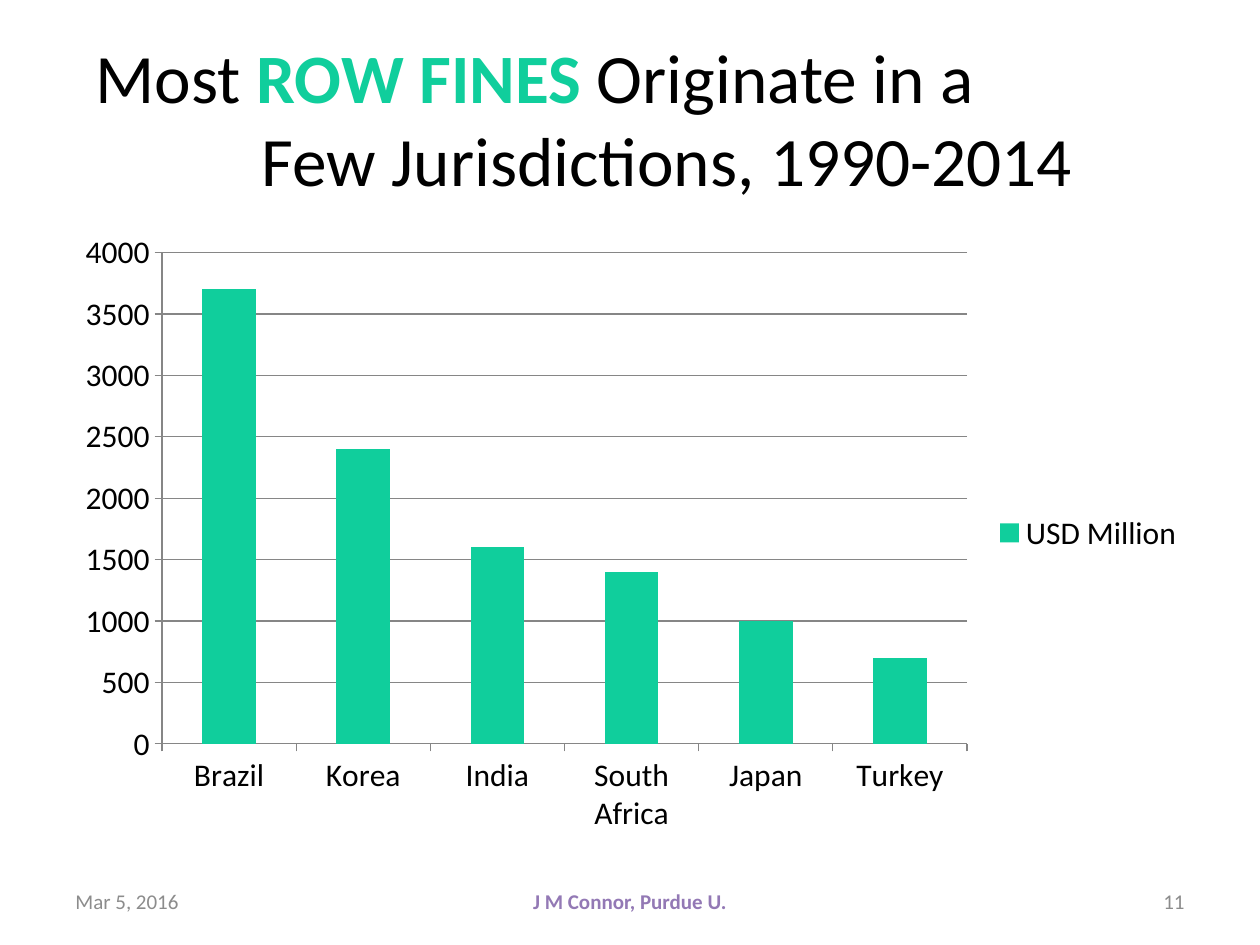
from dataclasses import dataclass

from pptx import Presentation
from pptx.chart.data import CategoryChartData
from pptx.dml.color import RGBColor
from pptx.enum.chart import XL_CHART_TYPE, XL_LEGEND_POSITION, XL_TICK_MARK
from pptx.enum.text import MSO_ANCHOR, MSO_AUTO_SIZE, PP_ALIGN
from pptx.util import Pt

PX = 914400 / 126
TITLE_ONLY = 5


@dataclass(frozen=True)
class Theme:
    font: str = "Calibri"
    ink: str = "000000"
    accent: str = "10CE9C"
    author: str = "9379B5"
    muted: str = "8C8C8C"
    grid: str = "868686"
    title_size: float = 39.6
    chart_size: float = 18
    footer_size: float = 12


THEME = Theme()
FINES = {"Brazil": 3700, "Korea": 2400, "India": 1600,
         "South Africa": 1400, "Japan": 1000, "Turkey": 700}


def px(length):
    return round(length * PX)


def style_font(font, size, color, bold=False):
    font.name = THEME.font
    font.size = Pt(size)
    font.bold = bold
    font.color.rgb = RGBColor.from_string(color)


def write(paragraph, text, *, size, color=THEME.ink, bold=False, align=None):
    run = paragraph.add_run()
    run.text = text
    style_font(run.font, size, color, bold)
    if align is not None:
        paragraph.alignment = align


def place_title(title, left, top, width, height):
    """Two lines, the second set in further by a hanging indent."""
    title.left, title.top = px(left), px(top)
    title.width, title.height = px(width), px(height)
    frame = title.text_frame
    frame.auto_size = MSO_AUTO_SIZE.NONE
    frame.vertical_anchor = MSO_ANCHOR.MIDDLE
    heading = frame.paragraphs[0]
    size = THEME.title_size
    write(heading, "Most ", size=size, align=PP_ALIGN.LEFT)
    write(heading, "ROW FINES", size=size, color=THEME.accent, bold=True)
    write(heading, " Originate in a", size=size)
    heading.add_line_break()
    write(heading, "Few Jurisdictions, 1990-2014", size=size)
    properties = heading._p.get_or_add_pPr()
    properties.set("marL", str(px(186)))
    properties.set("indent", str(px(-166)))


def style_axis(axis):
    axis.major_tick_mark = XL_TICK_MARK.OUTSIDE
    axis.minor_tick_mark = XL_TICK_MARK.NONE
    axis.format.line.color.rgb = RGBColor.from_string(THEME.grid)
    axis.format.line.width = Pt(0.75)


def place_fines_chart(slide, left, top, width, height):
    fines = CategoryChartData()
    fines.categories = list(FINES)
    fines.add_series("USD Million", list(FINES.values()))
    chart = slide.shapes.add_chart(
        XL_CHART_TYPE.COLUMN_STACKED,
        px(left), px(top), px(width), px(height), fines).chart
    style_font(chart.font, THEME.chart_size, THEME.ink)
    chart.has_title = False
    chart.has_legend = True
    chart.legend.position = XL_LEGEND_POSITION.RIGHT
    chart.legend.include_in_layout = False

    columns = chart.plots[0]
    columns.gap_width, columns.overlap = 150, 100
    columns.vary_by_categories = False
    fill = columns.series[0].format.fill
    fill.solid()
    fill.fore_color.rgb = RGBColor.from_string(THEME.accent)

    style_axis(chart.category_axis)
    amounts = chart.value_axis
    style_axis(amounts)
    amounts.minimum_scale, amounts.maximum_scale = 0, 4000
    amounts.major_unit = 500
    amounts.has_major_gridlines = True
    gridline = amounts.major_gridlines.format.line
    gridline.color.rgb = RGBColor.from_string(THEME.grid)
    gridline.width = Pt(0.75)


def place_footer(slide, left, top, width, height):
    """Date, author and page number at the left, centre and right of the box."""
    side, middle = 294, 400
    entries = (
        ("Mar 5, 2016", 0, side, PP_ALIGN.LEFT, THEME.muted, False),
        ("J M Connor, Purdue U.", (width - middle) // 2, middle,
         PP_ALIGN.CENTER, THEME.author, True),
        ("11", width - side, side, PP_ALIGN.RIGHT, THEME.muted, False),
    )
    for text, offset, span, align, color, bold in entries:
        frame = slide.shapes.add_textbox(
            px(left + offset), px(top), px(span), px(height)).text_frame
        frame.word_wrap = True
        frame.vertical_anchor = MSO_ANCHOR.MIDDLE
        write(frame.paragraphs[0], text, size=THEME.footer_size,
              color=color, bold=bold, align=align)


def main():
    deck = Presentation()
    deck.slide_width, deck.slide_height = px(1260), px(945)
    slide = deck.slides.add_slide(deck.slide_layouts[TITLE_ONLY])
    place_title(slide.shapes.title, 63, 38, 1134, 158)
    place_fines_chart(slide, 63, 221, 1134, 624)
    place_footer(slide, 63, 876, 1134, 50)
    deck.save("out.pptx")


if __name__ == "__main__":
    main()
